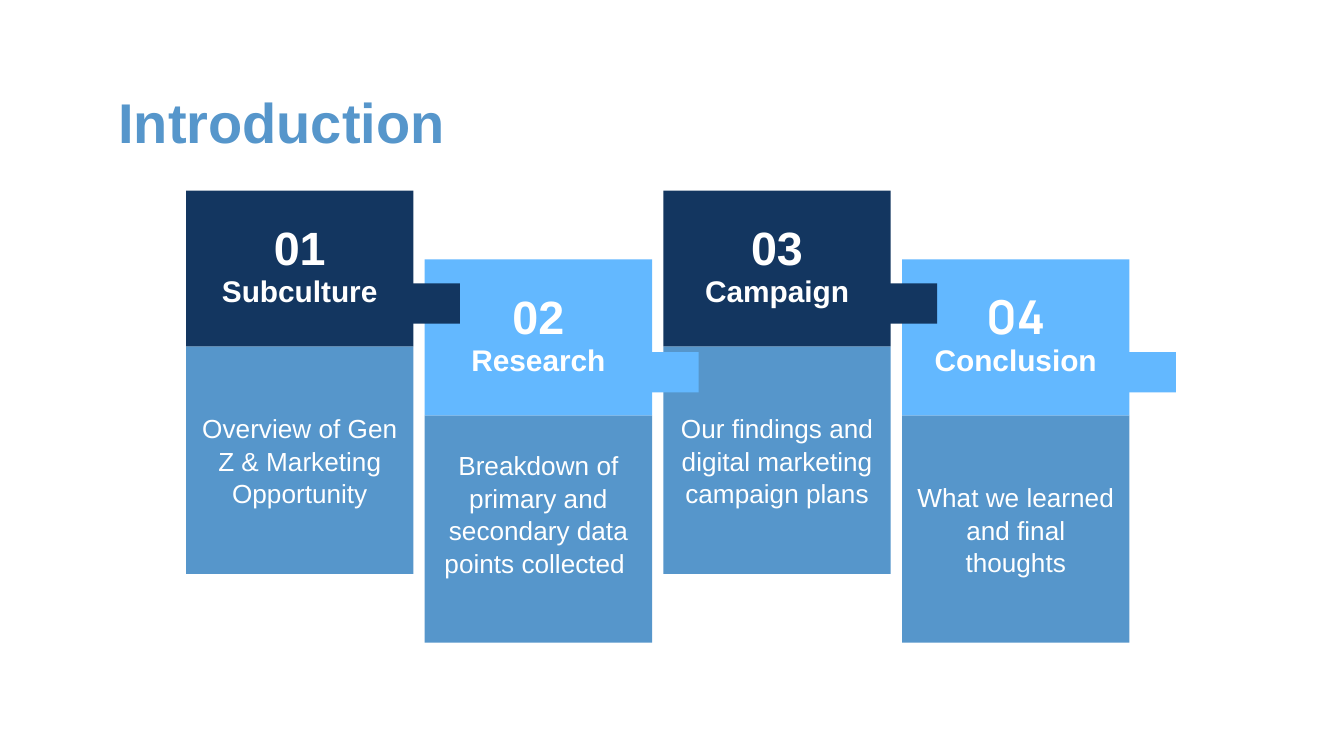
import pptx
import pptx.dml.color
import pptx.enum.shapes
import pptx.enum.text
import pptx.util

Pt = pptx.util.Pt
Align = pptx.enum.text.PP_ALIGN


class Theme:
    navy = "133660"
    sky = "63B8FF"
    blue = "5696CB"
    white = "FFFFFF"
    font = "Arial"
    title = 30
    number = 25
    label = 16
    body = 14
    inset = 7.2
    spacing = 1.04


class Deck:
    def __init__(self, theme, width, height):
        self.theme = theme
        self.file = pptx.Presentation()
        self.file.slide_width = Pt(width)
        self.file.slide_height = Pt(height)
        self.slide = self.file.slides.add_slide(self.file.slide_layouts[5])

    def color(self, code):
        return pptx.dml.color.RGBColor.from_string(code)

    def letter(self, shape, text, size, color, bold=False,
               align=Align.CENTER, font=None, foot=0):
        """Fill a shape with one paragraph; foot lifts it off the bottom."""
        frame = shape.text_frame
        frame.auto_size = pptx.enum.text.MSO_AUTO_SIZE.NONE
        frame.word_wrap = True
        frame.vertical_anchor = pptx.enum.text.MSO_ANCHOR.MIDDLE
        frame.margin_left = frame.margin_right = Pt(self.theme.inset)
        frame.margin_top = Pt(self.theme.inset)
        frame.margin_bottom = Pt(self.theme.inset + foot)
        line = frame.paragraphs[0]
        line.text = text
        line.alignment = align
        line.font.name = font or self.theme.font
        line.font.size = Pt(size)
        line.font.bold = bold
        line.font.color.rgb = self.color(color)
        return line

    def title(self, text, left, top, width, height):
        shape = self.slide.shapes.title
        shape.left, shape.top = Pt(left), Pt(top)
        shape.width, shape.height = Pt(width), Pt(height)
        self.letter(shape, text, self.theme.title, self.theme.blue,
                    bold=True, align=Align.LEFT)

    def block(self, left, top, width, height, fill, group=None):
        home = group or self.slide
        shape = home.shapes.add_shape(
            pptx.enum.shapes.MSO_SHAPE.RECTANGLE,
            Pt(left), Pt(top), Pt(width), Pt(height))
        shape.shadow.inherit = False
        shape.fill.solid()
        shape.fill.fore_color.rgb = self.color(fill)
        shape.line.fill.background()
        return shape

    def label(self, text, left, top, width, height, size, font=None):
        box = self.slide.shapes.add_textbox(
            Pt(left), Pt(top), Pt(width), Pt(height))
        self.letter(box, text, size, self.theme.white, bold=True, font=font)

    def card(self, left, top, fill, number, name, text, font=None, foot=0):
        """Draw a square body below a head with a tab on its right."""
        side, head = 121.8, 83.5
        body = self.block(left, top + head, side, side, self.theme.blue)
        line = self.letter(body, text, self.theme.body, self.theme.white,
                           foot=foot)
        line.line_spacing = self.theme.spacing
        group = self.slide.shapes.add_group_shape()
        self.block(left + 104.2, top + 49.7, 42.5, 21.6, fill, group)
        self.block(left, top, side, head, fill, group)
        self.label(name, left, top + 34.6, side, 38.2, self.theme.label)
        self.label(number, left + 19.1, top + 16.2, 83.5, 28.1,
                   self.theme.number, font)


def main():
    theme = Theme()
    deck = Deck(theme, 720, 405)
    deck.title("Introduction", 56.2, 42.5, 607.7, 44.6)
    cards = [
        ("Subculture", "Overview of Gen Z & Marketing Opportunity", {}),
        ("Research",
         "Breakdown of primary and secondary data points collected ",
         {"foot": 16.7}),
        ("Campaign", "Our findings and digital marketing campaign plans", {}),
        ("Conclusion", "What we learned and final thoughts",
         {"font": "Manrope"}),
    ]
    # From right to left, so that each tab lies over the next card.
    for index, (name, text, extra) in reversed(list(enumerate(cards))):
        low = index % 2
        deck.card(99.7 + 127.85 * index, 102.1 + 36.9 * low,
                  theme.sky if low else theme.navy,
                  f"{index + 1:02}", name, text, **extra)
    deck.file.save("out.pptx")


if __name__ == "__main__":
    main()
